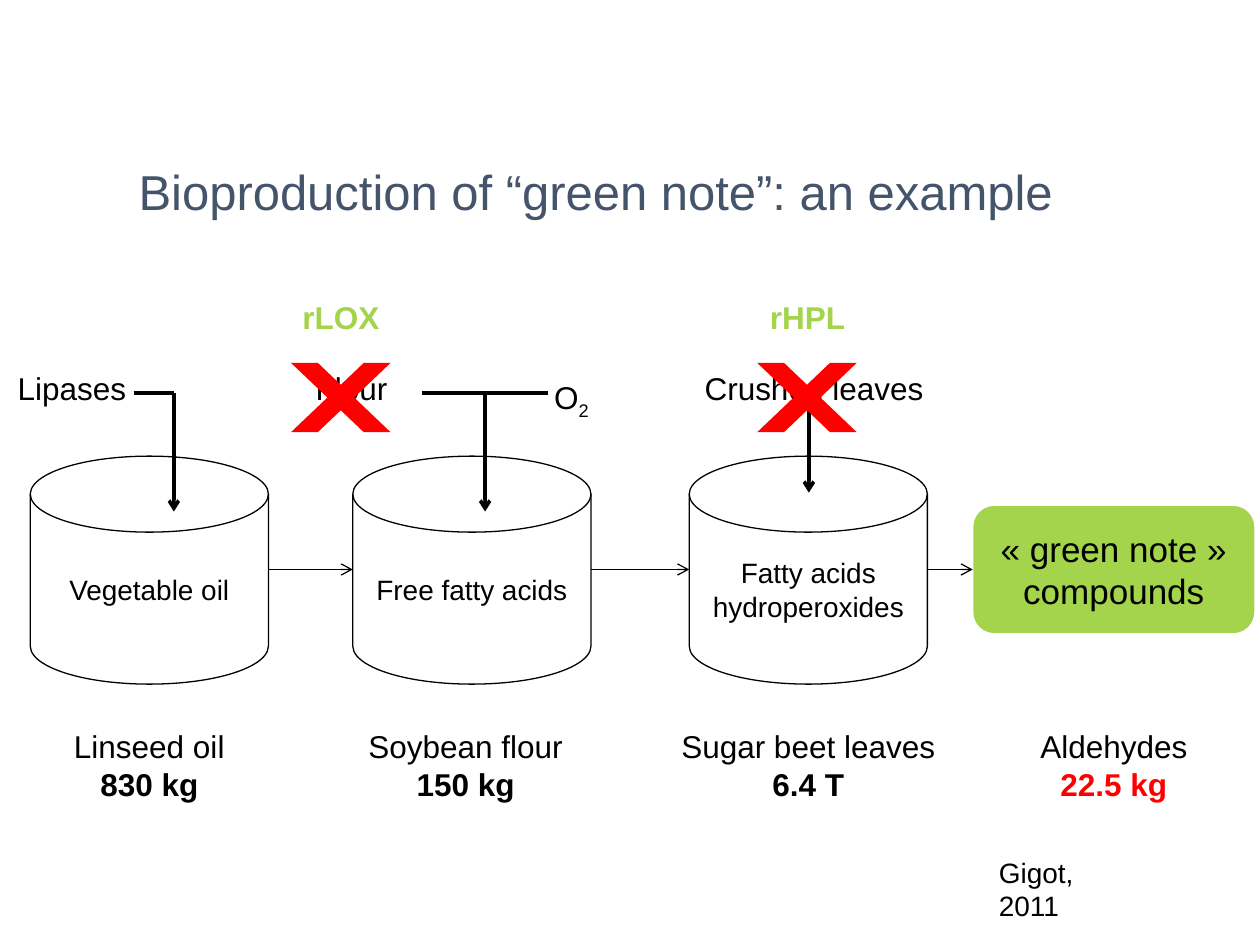
from lxml.etree import SubElement
from pptx import Presentation
from pptx.dml.color import RGBColor
from pptx.enum.shapes import MSO_CONNECTOR, MSO_SHAPE
from pptx.enum.text import MSO_ANCHOR, MSO_AUTO_SIZE, PP_ALIGN
from pptx.oxml.ns import qn
from pptx.util import Inches, Pt

THEME = {
    "font": "Arial",
    "black": RGBColor(0, 0, 0),
    "white": RGBColor(255, 255, 255),
    "red": RGBColor(255, 0, 0),
    "green": RGBColor(0xA3, 0xD4, 0x4C),
    "slate": RGBColor(0x44, 0x54, 0x6A),
    "title": Pt(28), "product": Pt(20), "label": Pt(18), "small": Pt(16),
    "thin": Pt(0.75), "thick": Pt(2),
}

presentation = Presentation()
presentation.slide_width, presentation.slide_height = Inches(10), Inches(7.5)
slide = presentation.slides.add_slide(presentation.slide_layouts[5])
shapes = slide.shapes

# The grid has 10 columns and 7.5 rows of square cells
CELL = presentation.slide_width / 10


def write(shape, lines, size="label", align=PP_ALIGN.CENTER, anchor=MSO_ANCHOR.TOP, wrap=True):
    """Fill a shape with lines, each a list of (text, colour, bold) runs."""
    frame = shape.text_frame
    settings = {"auto_size": MSO_AUTO_SIZE.NONE, "word_wrap": wrap, "vertical_anchor": anchor}
    for name, value in settings.items():
        setattr(frame, name, value)
    for index, line in enumerate(lines):
        paragraph = frame.add_paragraph() if index else frame.paragraphs[0]
        paragraph.alignment = align
        for text, colour, bold in line:
            run = paragraph.add_run()
            run.text = text
            for name, value in {"name": THEME["font"], "size": THEME[size], "bold": bold}.items():
                setattr(run.font, name, value)
            run.font.color.rgb = THEME[colour]


def cells(*lengths):
    return [round(length * CELL) for length in lengths]


# Title
title = shapes.title
title.left, title.top, title.width, title.height = cells(1, 1.23, 8, 0.57)
write(title, [[("Bioproduction of “green note”: an example", "slate", False)]],
      "title", PP_ALIGN.LEFT, MSO_ANCHOR.MIDDLE)

# Process tanks
TANK_TOP, TANK_WIDTH, TANK_HEIGHT = 3.62, 1.89, 1.81
tanks = [(0.24, "Vegetable oil"), (2.8, "Free fatty acids"), (5.47, "Fatty acids hydroperoxides")]
for left, text in tanks:
    tank = shapes.add_shape(MSO_SHAPE.FLOWCHART_MAGNETIC_DISK,
                            *cells(left, TANK_TOP, TANK_WIDTH, TANK_HEIGHT))
    tank.shadow.inherit = False
    tank.fill.background()
    tank.line.color.rgb, tank.line.width = THEME["black"], THEME["thin"]
    write(tank, [[(text, "black", False)]], "small", anchor=MSO_ANCHOR.MIDDLE)

# Final product
PRODUCT_LEFT, PRODUCT_WIDTH = 7.72, 2.24
product = shapes.add_shape(MSO_SHAPE.ROUNDED_RECTANGLE,
                           *cells(PRODUCT_LEFT, 4.01, PRODUCT_WIDTH, 1.02))
product.shadow.inherit = False
product.fill.solid()
product.fill.fore_color.rgb = THEME["green"]
product.line.color.rgb, product.line.width = THEME["white"], THEME["thin"]
write(product, [[("«\u00a0green note\u00a0» compounds", "black", False)]],
      "product", anchor=MSO_ANCHOR.MIDDLE)

# Flow between the stages, then the feeds into the tanks
FLOW_Y, FEED_Y, FEED_END = 4.52, 3.12, 4.06
stage_lefts = [left for left, _ in tanks] + [PRODUCT_LEFT]
lines = [(left + TANK_WIDTH, FLOW_Y, following, FLOW_Y, "thin", True)
         for left, following in zip(stage_lefts, stage_lefts[1:])]
lines += [
    (1.06, FEED_Y, 1.38, FEED_Y, "thick", False),
    (1.38, FEED_Y, 1.38, FEED_END, "thick", True),
    (3.35, FEED_Y, 4.35, FEED_Y, "thick", False),
    (3.85, FEED_Y, 3.85, FEED_END, "thick", True),
    (6.42, 3.2, 6.42, 3.91, "thick", True),
]
for *ends, weight, arrow in lines:
    connector = shapes.add_connector(MSO_CONNECTOR.STRAIGHT, *cells(*ends))
    connector.line.color.rgb, connector.line.width = THEME["black"], THEME[weight]
    if arrow:
        SubElement(connector.line._get_or_add_ln(), qn("a:tailEnd"), type="arrow")
    SubElement(connector._element.spPr, qn("a:effectLst"))

# Inputs and the enzymes that replace them
labels = [
    (0.04, 2.88, 1.06, "Lipases", "black", False),
    (2.4, 2.88, 0.78, "Flour", "black", False),
    (5.4, 2.88, 2.12, "Crushed leaves", "black", False),
    (2.3, 2.32, 0.81, "rLOX", "green", True),
    (6.01, 2.32, 0.8, "rHPL", "green", True),
]
for left, top, width, *run in labels:
    write(shapes.add_textbox(*cells(left, top, width, 0.4)), [[run]], wrap=False)

oxygen = shapes.add_textbox(*cells(4.3, 2.95, 0.49, 0.4))
write(oxygen, [[("O", "black", False), ("2", "black", False)]], align=PP_ALIGN.LEFT, wrap=False)
oxygen.text_frame.paragraphs[0].runs[1].font._element.set("baseline", "-25000")

# Quantities, centred under each stage
quantities = [("Linseed oil", "830 kg", "black"), ("Soybean flour", "150 kg", "black"),
              ("Sugar beet leaves", "6.4 T", "black"), ("Aldehydes", "22.5 kg", "red")]
centres = [left + TANK_WIDTH / 2 for left, _ in tanks] + [PRODUCT_LEFT + PRODUCT_WIDTH / 2]
centres[1] -= 0.05
for centre, (material, amount, colour) in zip(centres, quantities):
    box = shapes.add_textbox(*cells(centre - 1.12, 5.72, 2.24, 0.7))
    write(box, [[(material, "black", False)], [(amount, colour, True)]], wrap=False)

# Crosses over the replaced inputs: two mirrored bars each
for left in (2.31, 6.01):
    for mirrored in (False, True):
        bar = shapes.add_shape(MSO_SHAPE.PARALLELOGRAM, *cells(left, 2.88, 0.79, 0.55))
        bar.shadow.inherit = False
        bar.adjustments[0] = 1.05
        bar.fill.solid()
        bar.fill.fore_color.rgb = THEME["red"]
        bar.line.fill.background()
        if mirrored:
            bar._element.spPr.xfrm.set("flipH", "1")

citation = shapes.add_textbox(*cells(7.83, 6.74, 1.26, 0.64))
write(citation, [[("Gigot, 2011", "black", False)]], "small", PP_ALIGN.LEFT)

presentation.save("out.pptx")
